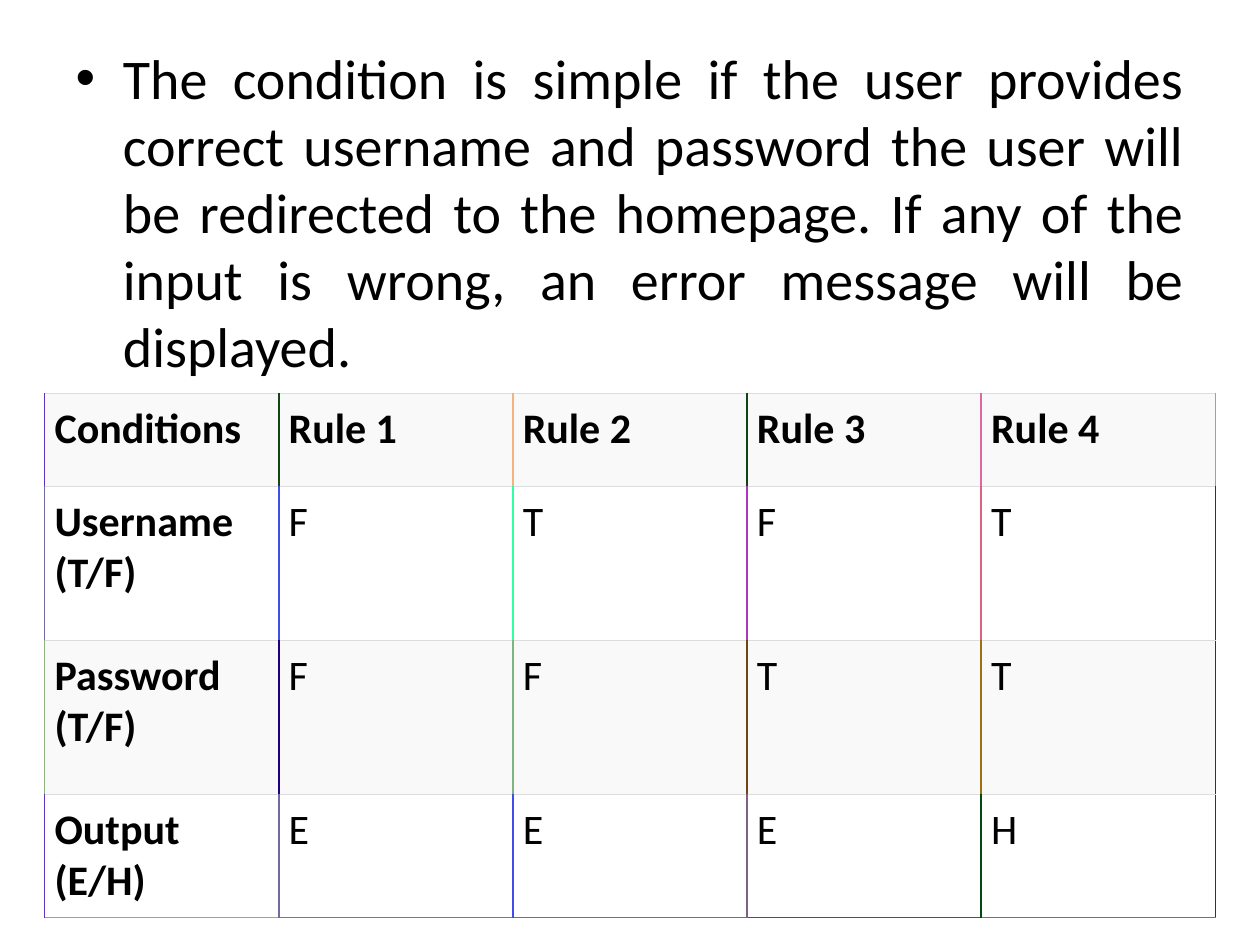
from lxml.etree import SubElement
from pptx import Presentation
from pptx.dml.color import RGBColor
from pptx.enum.text import MSO_ANCHOR, PP_ALIGN as Align
from pptx.oxml.ns import qn
from pptx.util import Cm, Pt

COLORS = {"text": "000000", "band": "F9F9F9", "plain": "FFFFFF", "rule": "DDDDDD"}

EXPLANATION = (
    "The condition is simple if the user provides correct username and password "
    "the user will be redirected to the homepage. If any of the input is wrong, "
    "an error message will be displayed."
)

DECISIONS = [
    ["Conditions", "Rule 1", "Rule 2", "Rule 3", "Rule 4"],
    ["Username (T/F)", "F", "T", "F", "T"],
    ["Password (T/F)", "F", "F", "T", "T"],
    ["Output (E/H)", "E", "E", "E", "H"],
]
ROW_HEIGHTS = [1.88, 3.1, 3.1, 2.49]

# Vertical lines of each row, from the left edge to the right edge
VERTICALS = [
    ["6034C0", "104A11", "F0B481", "104411", "E068A2", "80B481"],
    ["706BA2", "404DE9", "30FFA3", "B034C0", "E06082", "0032C0"],
    ["90B481", "200081", "80B481", "704511", "A06F0F", "0032C0"],
    ["6034C0", "706BA2", "404DE9", "806082", "004A11", "0032C0"],
]
BOTTOM_EDGE = ["80B481", "F030C0", "A06F0F", "6034C0", "706BA2"]


class SlideBuilder:
    font = "Calibri"
    body_size = Pt(32)
    table_size = Pt(24)
    cell_margin = Cm(0.2)

    def __init__(self, slide):
        self.slide = slide

    def format_run(self, run, size, bold=False):
        run.font.name = self.font
        run.font.size = size
        run.font.bold = bold
        run.font.color.rgb = RGBColor.from_string(COLORS["text"])

    def bullet(self, text, left, top, width, height):
        body = self.slide.placeholders[1]
        body.left, body.top, body.width, body.height = map(Cm, (left, top, width, height))
        body.text_frame.text = text
        paragraph = body.text_frame.paragraphs[0]
        paragraph.alignment = Align.JUSTIFY
        self.format_run(paragraph.runs[0], self.body_size)

    def border(self, cell, side, color, width):
        line = SubElement(cell._tc.get_or_add_tcPr(), qn(f"a:ln{side}"), w=str(Pt(width)))
        fill = SubElement(line, qn("a:solidFill"))
        SubElement(fill, qn("a:srgbClr"), val=color)

    def cell(self, cell, text, bold, fill, borders):
        cell.text = text
        self.format_run(cell.text_frame.paragraphs[0].runs[0], self.table_size, bold)
        cell.vertical_anchor = MSO_ANCHOR.TOP
        cell.margin_left = cell.margin_right = self.cell_margin
        cell.margin_top = cell.margin_bottom = self.cell_margin
        for side, (color, width) in borders.items():
            self.border(cell, side, color, width)
        cell.fill.solid()
        cell.fill.fore_color.rgb = RGBColor.from_string(fill)

    def table(self, rows, heights, left, top, width):
        frame = self.slide.shapes.add_table(
            len(rows), len(rows[0]), Cm(left), Cm(top), Cm(width), Cm(sum(heights))
        )
        table = frame.table
        table.first_row = table.horz_banding = False
        rule = (COLORS["rule"], 0.75)
        for r, texts in enumerate(rows):
            table.rows[r].height = Cm(heights[r])
            is_last = r == len(rows) - 1
            fill = COLORS["plain" if r % 2 else "band"]
            for c, text in enumerate(texts):
                borders = {
                    "L": (VERTICALS[r][c], 1),
                    "R": (VERTICALS[r][c + 1], 1),
                    "T": rule,
                    "B": (BOTTOM_EDGE[c], 1) if is_last else rule,
                }
                self.cell(table.cell(r, c), text, r == 0 or c == 0, fill, borders)


def main():
    deck = Presentation()
    deck.slide_width, deck.slide_height = Cm(25.4), Cm(19.05)
    slide = deck.slides.add_slide(deck.slide_layouts[1])

    # The slide has no heading
    heading = slide.shapes.title.element
    heading.getparent().remove(heading)

    builder = SlideBuilder(slide)
    # Explanation of the login condition
    builder.bullet(EXPLANATION, 1.27, 0.74, 22.86, 12.57)
    # Decision table
    builder.table(DECISIONS, ROW_HEIGHTS, 0.9, 7.93, 23.6)

    deck.save("out.pptx")


if __name__ == "__main__":
    main()
